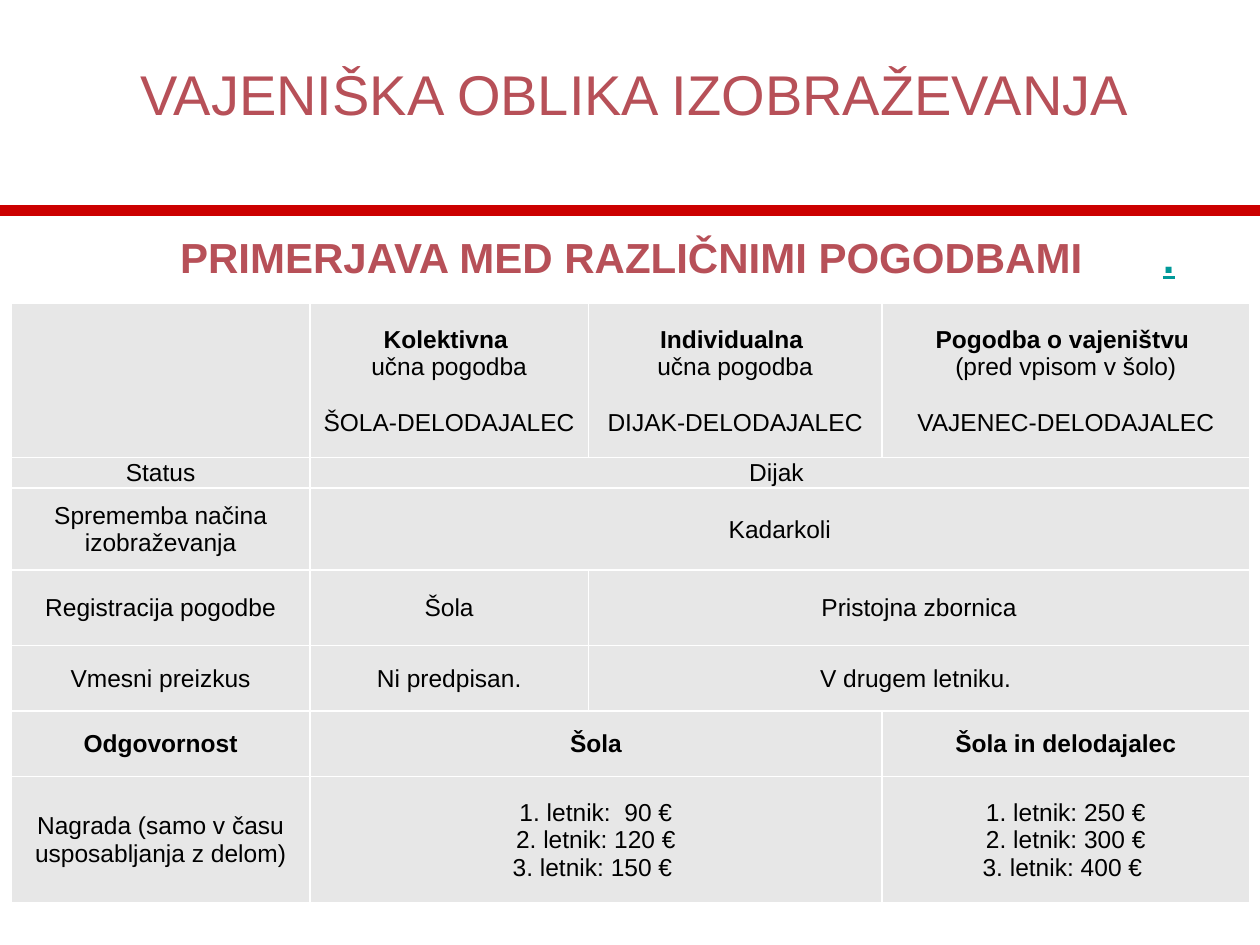
"""Build a slide comparing the contracts used in apprenticeship education."""
from lxml.etree import SubElement
from pptx import Presentation
from pptx.dml.color import RGBColor
from pptx.enum.shapes import MSO_CONNECTOR
from pptx.enum.text import MSO_ANCHOR, PP_ALIGN
from pptx.oxml.ns import qn
from pptx.util import Inches, Pt

ROSE, RED, TEAL = "B75058", "CC0000", "009999"
BLACK, WHITE, GREY = "000000", "FFFFFF", "E7E7E7"

COLS = [2.37, 2.21, 2.33, 2.92]
ROWS = [1.22, 0.22, 0.65, 0.6, 0.52, 0.52, 1]
CONTRACTS = [
    ("Kolektivna ", "učna pogodba", "ŠOLA-DELODAJALEC"),
    ("Individualna ", "učna pogodba", "DIJAK-DELODAJALEC"),
    ("Pogodba o vajeništvu ", "(pred vpisom v šolo)", "VAJENEC-DELODAJALEC"),
]
BODY = [
    [("Status", 1), ("Dijak ", 3)],
    [("Sprememba načina izobraževanja", 1), ("Kadarkoli", 3)],
    [("Registracija pogodbe", 1), ("Šola", 1), ("Pristojna zbornica", 2)],
    [("Vmesni preizkus", 1), ("Ni predpisan.", 1), ("V drugem letniku. ", 2)],
    [("Odgovornost", 1), ("Šola", 2), ("Šola in delodajalec", 1)],
    [("Nagrada (samo v času usposabljanja z delom)", 1),
     ("1. letnik:  90 €\n2. letnik: 120 €\n3. letnik: 150 € ", 2),
     ("1. letnik: 250 €\n2. letnik: 300 €\n3. letnik: 400 € ", 1)],
]
BOLD_ROW = 5


def rgb(value):
    return RGBColor.from_string(value)


def apply(obj, **values):
    for name, value in values.items():
        setattr(obj, name, value)


class Deck:
    def __init__(self, width, height, font):
        self.font = font
        self.prs = Presentation()
        apply(self.prs, slide_width=Inches(width), slide_height=Inches(height))
        self.s = self.prs.slides.add_slide(self.prs.slide_layouts[5])

    def run(self, p, text, size, color, **style):
        r = p.add_run()
        r.text = text
        apply(r.font, name=self.font, size=Pt(size), **style)
        r.font.color.rgb = rgb(color)

    def title(self, text, left, top, width, height):
        sp = self.s.shapes.title
        apply(sp, left=Inches(left), top=Inches(top),
              width=Inches(width), height=Inches(height))
        apply(sp.text_frame, vertical_anchor=MSO_ANCHOR.TOP, word_wrap=True)
        p = sp.text_frame.paragraphs[0]
        p.alignment = PP_ALIGN.CENTER
        self.run(p, text, 32, ROSE)

    def rule(self, y, width, color):
        x2 = self.prs.slide_width
        cx = self.s.shapes.add_connector(
            MSO_CONNECTOR.STRAIGHT, 0, Inches(y), x2, Inches(y))
        cx.line.color.rgb = rgb(color)
        cx.line.width = Pt(width)
        SubElement(cx._element.spPr, qn("a:effectLst"))

    def subtitle(self, text, mark, left, top, width, height, indent, tab):
        sp = self.s.shapes.add_textbox(
            Inches(left), Inches(top), Inches(width), Inches(height))
        apply(sp.text_frame, word_wrap=True, margin_left=Inches(indent))
        p = sp.text_frame.paragraphs[0]
        p.line_spacing = 0.9
        tabs = SubElement(p._p.get_or_add_pPr(), qn("a:tabLst"))
        SubElement(tabs, qn("a:tab"), pos=str(Inches(tab)), algn="l")
        self.run(p, text + "\t", 24, ROSE, bold=True)
        self.run(p, mark, 24, TEAL, bold=True, underline=True)

    def table(self, left, top, cols, rows):
        tbl = self.s.shapes.add_table(
            len(rows), len(cols), Inches(left), Inches(top),
            Inches(sum(cols)), Inches(sum(rows))).table
        apply(tbl, first_row=False, horz_banding=False)
        for col, width in zip(tbl.columns, cols):
            col.width = Inches(width)
        for row, height in zip(tbl.rows, rows):
            row.height = Inches(height)
        for cell in tbl.iter_cells():
            self.cell_style(cell)
        return tbl

    def cell_style(self, cell):
        apply(cell, vertical_anchor=MSO_ANCHOR.MIDDLE, margin_left=Inches(0.01),
              margin_right=Inches(0.01), margin_top=Inches(0.01), margin_bottom=0)
        for side in "LRTB":
            ln = SubElement(cell._tc.get_or_add_tcPr(), qn(f"a:ln{side}"), w=str(Pt(1)))
            SubElement(SubElement(ln, qn("a:solidFill")), qn("a:srgbClr"), val=WHITE)
        cell.fill.solid()
        cell.fill.fore_color.rgb = rgb(GREY)

    def cell_text(self, cell, lines, bolds):
        tf = cell.text_frame
        for i, (line, bold) in enumerate(zip(lines, bolds)):
            p = tf.add_paragraph() if i else tf.paragraphs[0]
            p.alignment = PP_ALIGN.CENTER
            self.run(p, line, 14, BLACK, bold=bold)
        return tf


def main():
    deck = Deck(10, 7.5, "Arial")
    deck.rule(1.67, 6, RED)
    deck.title("VAJENIŠKA OBLIKA IZOBRAŽEVANJA", 0.58, 0.42, 8.92, 1.08)
    deck.subtitle("PRIMERJAVA MED RAZLIČNIMI POGODBAMI", ".",
                  0.92, 1.83, 8.92, 0.76, indent=0.51, tab=7.8)
    tbl = deck.table(0.09, 2.41, COLS, ROWS)
    for c, lines in enumerate(CONTRACTS, 1):
        tf = deck.cell_text(tbl.cell(0, c), lines, (True, False, False))
        tf.paragraphs[-1].space_before = Pt(16)
    for r, entries in enumerate(BODY, 1):
        c = 0
        for text, span in entries:
            cell = tbl.cell(r, c)
            if span > 1:
                cell.merge(tbl.cell(r, c + span - 1))
            lines = text.split("\n")
            deck.cell_text(cell, lines, [r == BOLD_ROW] * len(lines))
            c += span
    deck.prs.save("out.pptx")


if __name__ == "__main__":
    main()
